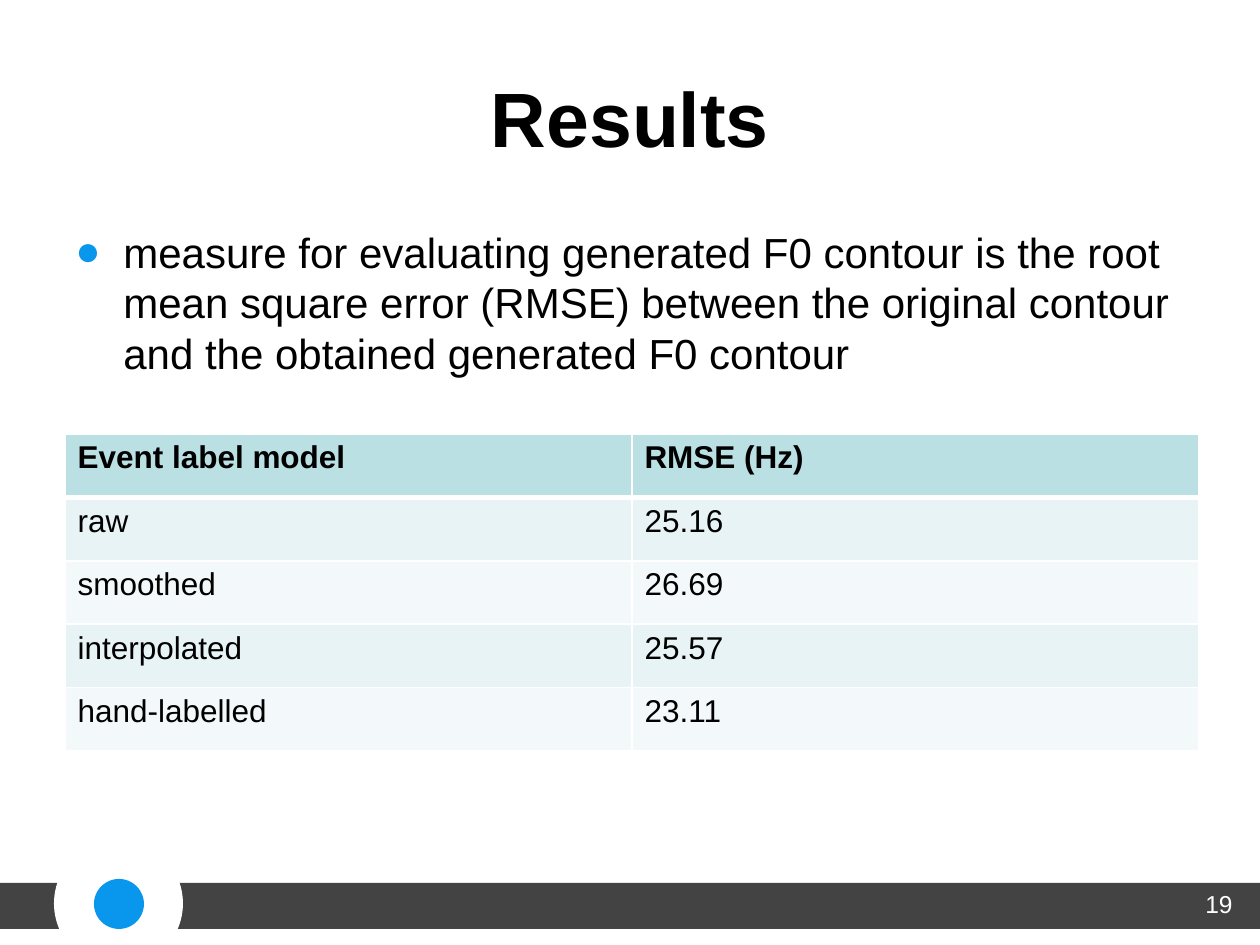
from lxml.etree import SubElement
from pptx import Presentation
from pptx.dml.color import RGBColor
from pptx.enum.shapes import MSO_SHAPE
from pptx.enum.text import MSO_ANCHOR, PP_ALIGN
from pptx.oxml.ns import qn
from pptx.util import Pt

PX = 914400 // 126
COLORS = {"black": "000000", "white": "FFFFFF", "bar": "434343", "blue": "0996ED",
          "head": "BBE0E3", "odd": "E7F3F4", "even": "F3F9FA"}


def place(*box):
    return [n * PX for n in box]


def style(para, size, color="black", bold=False):
    font = para.font
    font.name, font.size, font.bold = "Arial", Pt(size), bold
    font.color.rgb = RGBColor.from_string(COLORS[color])


deck = Presentation()
deck.slide_width, deck.slide_height = place(1260, 945)
slide = deck.slides.add_slide(deck.slide_layouts[5])
shapes = slide.shapes

# Footer bar and dot
for kind, box, color in [
    (MSO_SHAPE.RECTANGLE, (0, 883, 64, 46), "bar"),
    (MSO_SHAPE.RECTANGLE, (174, 883, 1086, 46), "bar"),
    (MSO_SHAPE.OVAL, (54, 839, 129, 129), "white"),
    (MSO_SHAPE.OVAL, (94, 879, 50, 50), "blue"),
]:
    part = shapes.add_shape(kind, *place(*box))
    part.shadow.inherit = False
    part.fill.solid()
    part.fill.fore_color.rgb = RGBColor.from_string(COLORS[color])
    part.line.fill.background()

# Title
title = shapes.title
title.left, title.top, title.width, title.height = place(63, 38, 1134, 158)
title.text_frame.text = "Results"
title.text_frame.vertical_anchor = MSO_ANCHOR.MIDDLE
para = title.text_frame.paragraphs[0]
para.alignment = PP_ALIGN.CENTER
style(para, 44, bold=True)

# Bullet text
body = shapes.add_textbox(*place(63, 220, 1134, 173)).text_frame
body.word_wrap = True
para = body.paragraphs[0]
para.text = ("measure for evaluating generated F0 contour is the root mean square error "
             "(RMSE) between the original contour and the obtained generated F0 contour")
para.space_before = Pt(5)
style(para, 24)
props = para._p.get_or_add_pPr()
props.set("marL", str(48 * PX))
props.set("indent", str(-48 * PX))
tint = SubElement(props, qn("a:buClr"))
SubElement(tint, qn("a:srgbClr"), val=COLORS["blue"])
SubElement(props, qn("a:buFont"), typeface="Arial")
SubElement(props, qn("a:buChar"), char="●")

# Results table
rows = [("Event label model", "RMSE (Hz)"), ("raw", "25.16"), ("smoothed", "26.69"),
        ("interpolated", "25.57"), ("hand-labelled", "23.11")]
grid = shapes.add_table(len(rows), 2, *place(65, 434, 1134, 317)).table
for r, row in enumerate(rows):
    fill = "head" if r == 0 else "odd" if r % 2 else "even"
    for c, text in enumerate(row):
        cell = grid.cell(r, c)
        cell.text = text
        style(cell.text_frame.paragraphs[0], 18, bold=r == 0)
        props = cell._tc.get_or_add_tcPr()
        for side in "LRTB":
            thick = (r, side) in [(0, "B"), (1, "T")]
            edge = SubElement(props, qn(f"a:ln{side}"), w=str(Pt(3 if thick else 1)))
            paint = SubElement(edge, qn("a:solidFill"))
            SubElement(paint, qn("a:srgbClr"), val=COLORS["white"])
        cell.fill.solid()
        cell.fill.fore_color.rgb = RGBColor.from_string(COLORS[fill])

# Slide number
foot = shapes.add_textbox(*place(1047, 883, 198, 66)).text_frame
foot.word_wrap = True
para = foot.paragraphs[0]
para.text = "19"
para.alignment = PP_ALIGN.RIGHT
style(para, 14, "white")

deck.save("out.pptx")
